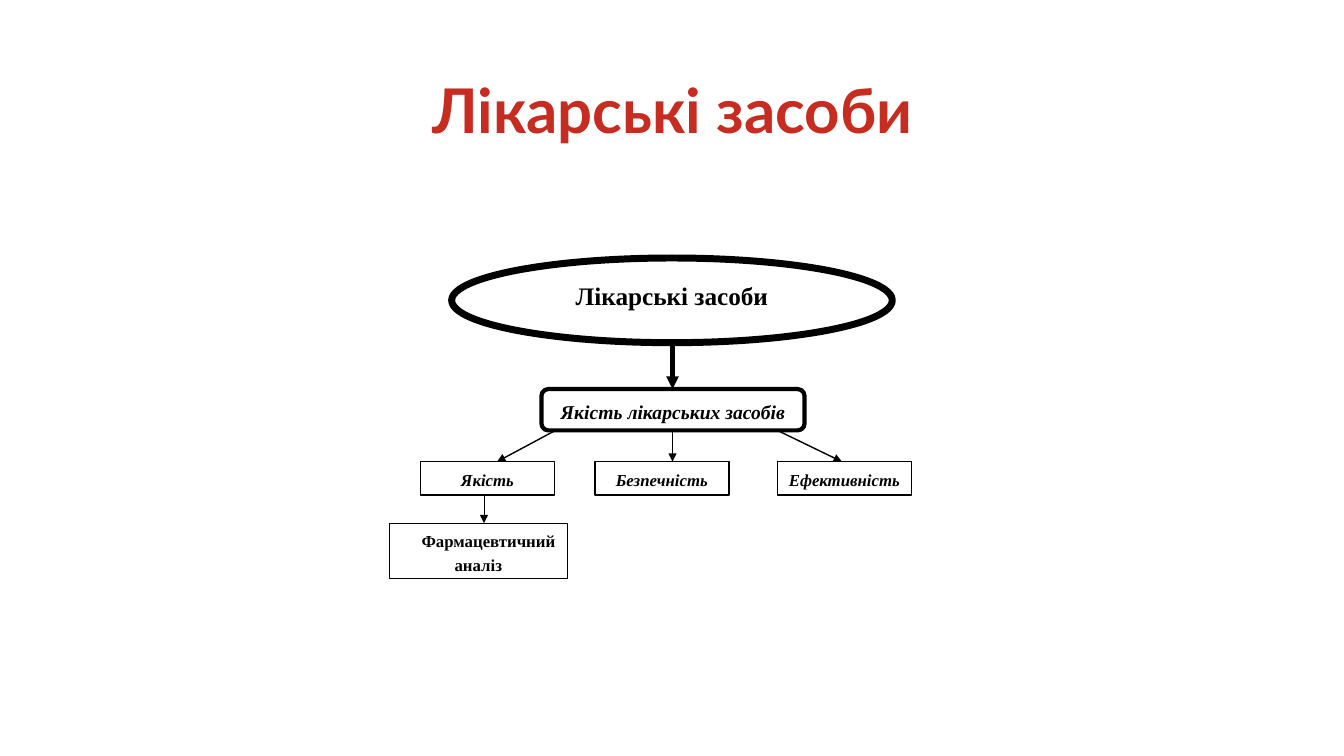
from collections import namedtuple
from lxml.etree import SubElement
from pptx import Presentation
from pptx.dml.color import RGBColor
from pptx.enum.shapes import MSO_CONNECTOR, MSO_SHAPE
from pptx.enum.text import MSO_ANCHOR, PP_ALIGN
from pptx.oxml.ns import qn
from pptx.util import Inches, Pt

Box = namedtuple("Box", "left top width height")
WIDTH, HEIGHT = 13.33, 7.5
COLUMNS, ROWS = 52, 32


def color(value):
    return RGBColor.from_string(value)


def set_text(frame, text, font, size, shade, spacing, italic=False):
    frame.word_wrap = True
    para = frame.paragraphs[0]
    para.text = text
    para.alignment = PP_ALIGN.CENTER
    para.line_spacing = spacing
    para.font.name = font
    para.font.size = Pt(size)
    para.font.bold = True
    para.font.italic = italic
    para.font.color.rgb = color(shade)
    return para


def add_title(page, box, text):
    title = page.shapes.add_textbox(*map(Inches, box))
    title.text_frame.vertical_anchor = MSO_ANCHOR.MIDDLE
    set_text(title.text_frame, text, "Lato", 44, "C72C21", 0.9)


def add_node(page, kind, box, text, size, line_width, italic=False):
    node = page.shapes.add_shape(kind, *map(Inches, box))
    node.shadow.inherit = False
    node.fill.solid()
    node.fill.fore_color.rgb = color("FFFFFF")
    node.line.color.rgb = color("000000")
    node.line.width = Pt(line_width)
    frame = node.text_frame
    frame.vertical_anchor = MSO_ANCHOR.TOP
    frame.margin_left = frame.margin_right = Inches(0.08)
    return set_text(frame, text, "Times New Roman", size, "000000", 1.15, italic)


def add_arrow(page, start, end, line_width):
    arrow = page.shapes.add_connector(MSO_CONNECTOR.STRAIGHT, *map(Inches, start + end))
    arrow.line.color.rgb = color("000000")
    arrow.line.width = Pt(line_width)
    SubElement(arrow.line._get_or_add_ln(), qn("a:tailEnd"), type="triangle")
    SubElement(arrow._element.spPr, qn("a:effectLst"))


def add_diagram(page, box):
    column, row = box.width / COLUMNS, box.height / ROWS

    def point(x, y):
        return box.left + x * column, box.top + y * row

    def cell(x, y, columns, rows):
        return Box(*point(x, y), columns * column, rows * row)

    middle = 28.1
    quality_top, quality_bottom = 13, 17.1
    leaf_top, leaf_rows = 20.2, 3.3
    leaf_bottom = leaf_top + leaf_rows
    analysis_top = 26.3

    add_node(page, MSO_SHAPE.OVAL, cell(6.2, 0, 43.7, 8.4), "Лікарські засоби", 18, 5)
    add_node(page, MSO_SHAPE.ROUNDED_RECTANGLE,
             cell(15.1, quality_top, 26.1, quality_bottom - quality_top),
             "Якість лікарських засобів", 14, 3, italic=True)
    for x, text in ((3.1, "Якість"), (20.4, "Безпечність"), (38.5, "Ефективність")):
        add_node(page, MSO_SHAPE.RECTANGLE, cell(x, leaf_top, 13.3, leaf_rows),
                 text, 12, 1, italic=True)
    analysis = add_node(page, MSO_SHAPE.RECTANGLE, cell(0, analysis_top, 17.7, 5.5),
                        "Фармацевтичний аналіз", 12, 0.75)
    analysis._p.get_or_add_pPr().set("indent", str(Inches(0.2)))

    add_arrow(page, point(middle, 8.4), point(middle, quality_top), 3)
    for start, end in ((16.5, 10.7), (middle, middle), (38.5, 44.9)):
        add_arrow(page, point(start, quality_bottom), point(end, leaf_top), 1)
    add_arrow(page, point(9.4, leaf_bottom), point(9.4, analysis_top), 0.25)


def main():
    deck = Presentation()
    deck.slide_width, deck.slide_height = Inches(WIDTH), Inches(HEIGHT)
    page = deck.slides.add_slide(deck.slide_layouts[6])
    add_title(page, Box(0.92, 0.4, 11.5, 1.45), "Лікарські засоби")
    add_diagram(page, Box(3.86, 2.56, 5.2, 3.2))
    deck.save("out.pptx")


if __name__ == "__main__":
    main()
